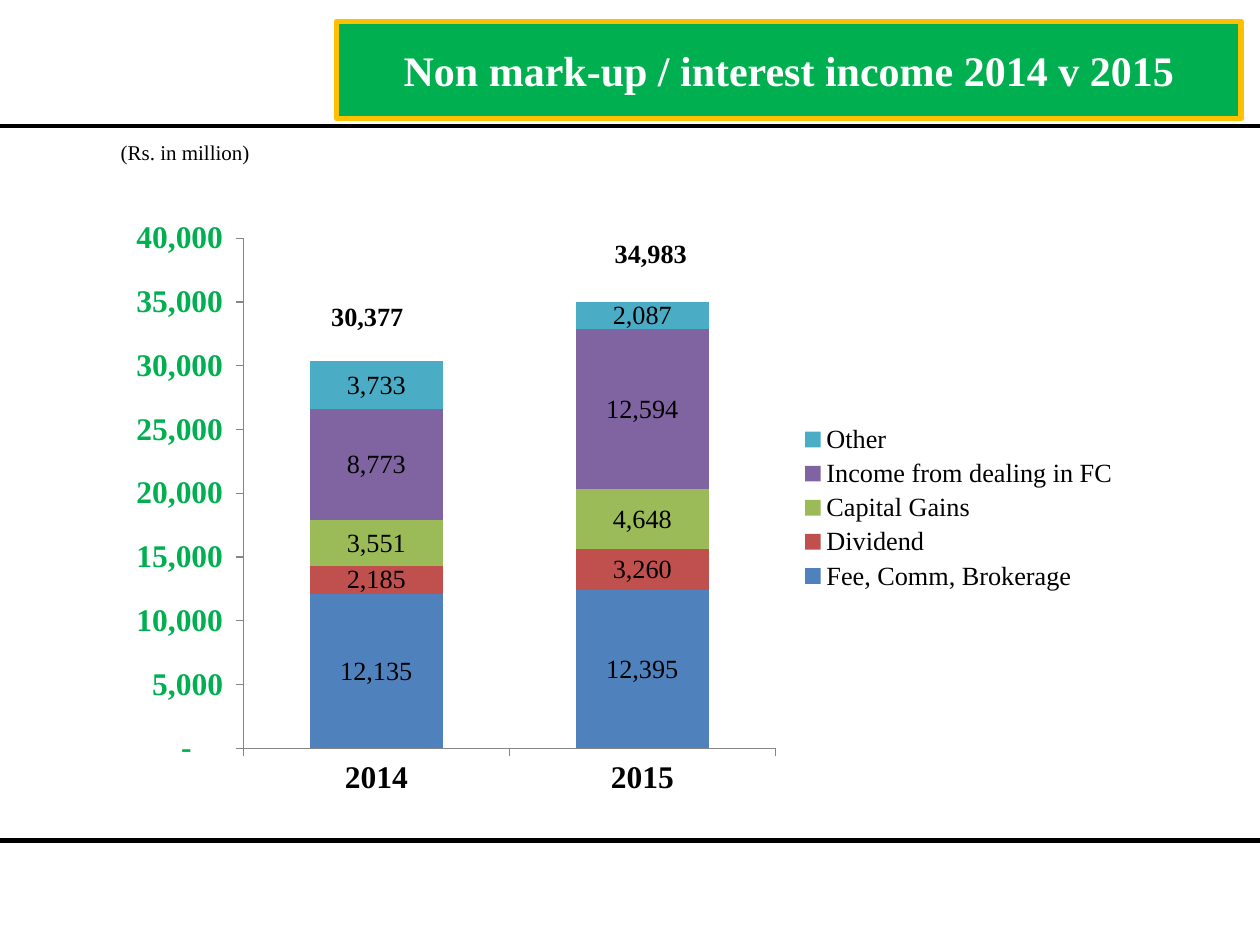
"""Build a slide with a stacked column chart of non mark-up income, 2014 v 2015."""
from lxml import etree
from pptx import Presentation
from pptx.chart.data import CategoryChartData
from pptx.dml.color import RGBColor
from pptx.enum.chart import XL_CHART_TYPE, XL_LEGEND_POSITION, XL_TICK_MARK
from pptx.enum.shapes import MSO_CONNECTOR
from pptx.enum.text import MSO_ANCHOR, MSO_AUTO_SIZE, PP_ALIGN
from pptx.oxml import parse_xml
from pptx.oxml.ns import nsdecls, qn
from pptx.util import Inches, Pt

FONT = "Times New Roman"
BLACK = RGBColor(0x00, 0x00, 0x00)
WHITE = RGBColor(0xFF, 0xFF, 0xFF)
GREEN = RGBColor(0x00, 0xB0, 0x50)
GOLD = RGBColor(0xFF, 0xC0, 0x00)
GRAY = RGBColor(0x86, 0x86, 0x86)
BLUE = RGBColor(0x4F, 0x81, 0xBD)
RED = RGBColor(0xC0, 0x50, 0x4D)
OLIVE = RGBColor(0x9B, 0xBB, 0x59)
PURPLE = RGBColor(0x80, 0x64, 0xA2)
TEAL = RGBColor(0x4B, 0xAC, 0xC6)

TITLE = "Non mark-up / interest income 2014 v 2015"
YEARS = ["2014", "2015"]
INCOME = [
    ("Fee, Comm, Brokerage", (12135, 12395), BLUE),
    ("Dividend", (2185, 3260), RED),
    ("Capital Gains", (3551, 4648), OLIVE),
    ("Income from dealing in FC", (8773, 12594), PURPLE),
    ("Other", (3733, 2087), TEAL),
]
NOTES = [
    ("30,377", (2.33, 2.33, 1.17, 0.35), 15, True, PP_ALIGN.CENTER),
    ("34,983", (4.58, 1.83, 1.17, 0.35), 15, True, PP_ALIGN.CENTER),
    ("(Rs. in million)", (0.86, 1.06, 1.25, 0.3), 12, False, PP_ALIGN.LEFT),
]
RULE_TOPS = [1, 6.67]
CHART_BOX = (0.86, 1.66, 8.12, 4.74)
PLOT_BOX = (1.93, 1.89, 4.22, 4.05)
AXIS_FORMAT = '_(* #,##0_);_(* \\(#,##0\\);_(* "-"??_);_(@_)'


def style_font(font, size, color, bold=False):
    font.name = FONT
    font.size = Pt(size)
    font.bold = bold
    font.color.rgb = color


def write(shape, text, size, color, bold, alignment):
    shape.text_frame.word_wrap = True
    paragraph = shape.text_frame.paragraphs[0]
    paragraph.alignment = alignment
    run = paragraph.add_run()
    run.text = text
    style_font(run.font, size, color, bold)


def add_title(slide):
    title = slide.shapes.title
    title.left, title.top, title.width, title.height = map(
        Inches, (2.67, 0.17, 7.18, 0.77))
    title.fill.solid()
    title.fill.fore_color.rgb = GREEN
    title.line.color.rgb = GOLD
    title.line.width = Pt(3)
    title.text_frame.vertical_anchor = MSO_ANCHOR.MIDDLE
    write(title, TITLE, 24, WHITE, True, PP_ALIGN.CENTER)


def add_rule(slide, top):
    rule = slide.shapes.add_connector(
        MSO_CONNECTOR.STRAIGHT, 0, Inches(top), Inches(10), Inches(top))
    rule.line.color.rgb = BLACK
    rule.line.width = Pt(2.5)
    etree.SubElement(rule._element.spPr, qn("a:effectLst"))


def add_note(slide, text, box, size, bold, alignment):
    note = slide.shapes.add_textbox(*map(Inches, box))
    write(note, text, size, BLACK, bold, alignment)
    note.text_frame.auto_size = MSO_AUTO_SIZE.SHAPE_TO_FIT_TEXT


def set_plot_layout(chart):
    left, top, width, height = CHART_BOX
    plot_left, plot_top, plot_width, plot_height = PLOT_BOX
    fractions = {
        "x": (plot_left - left) / width,
        "y": (plot_top - top) / height,
        "w": plot_width / width,
        "h": plot_height / height,
    }
    settings = [("layoutTarget", "inner"), ("xMode", "edge"), ("yMode", "edge")]
    settings += [(key, f"{value:.3f}") for key, value in fractions.items()]
    items = "".join(f'<c:{key} val="{value}"/>' for key, value in settings)
    layout = parse_xml(
        f'<c:layout {nsdecls("c")}><c:manualLayout>{items}</c:manualLayout></c:layout>')
    plot_area = chart._chartSpace.chart.plotArea
    for previous in plot_area.findall(qn("c:layout")):
        plot_area.remove(previous)
    plot_area.insert(0, layout)


def style_axis(axis, color):
    axis.has_major_gridlines = False
    axis.major_tick_mark = XL_TICK_MARK.OUTSIDE
    axis.minor_tick_mark = XL_TICK_MARK.NONE
    axis.format.line.color.rgb = GRAY
    axis.format.line.width = Pt(0.75)
    style_font(axis.tick_labels.font, 18, color, True)


def add_income_chart(slide):
    data = CategoryChartData(number_format="#,##0")
    data.categories = YEARS
    for name, values, _ in INCOME:
        data.add_series(name, values)
    chart = slide.shapes.add_chart(
        XL_CHART_TYPE.COLUMN_STACKED, *map(Inches, CHART_BOX), data).chart
    chart.has_title = False
    chart.font.name = "Calibri"
    chart.font.size = Pt(18)
    chart.font.color.rgb = BLACK

    plot = chart.plots[0]
    plot.gap_width = 100
    plot.overlap = 100
    plot.vary_by_categories = False
    for series, (_, _, color) in zip(plot.series, INCOME):
        series.format.fill.solid()
        series.format.fill.fore_color.rgb = color
        series.data_labels.show_value = True
        style_font(series.data_labels.font, 15, BLACK)

    style_axis(chart.category_axis, BLACK)
    value_axis = chart.value_axis
    style_axis(value_axis, GREEN)
    value_axis.minimum_scale = 0
    value_axis.maximum_scale = 40000
    value_axis.major_unit = 5000
    value_axis.tick_labels.number_format = AXIS_FORMAT
    value_axis.tick_labels.number_format_is_linked = False

    chart.has_legend = True
    chart.legend.position = XL_LEGEND_POSITION.RIGHT
    chart.legend.include_in_layout = False
    style_font(chart.legend.font, 15, BLACK)
    set_plot_layout(chart)


def main():
    presentation = Presentation()
    presentation.slide_width = Inches(10)
    presentation.slide_height = Inches(7.5)
    slide = presentation.slides.add_slide(presentation.slide_layouts[5])
    for top in RULE_TOPS:
        add_rule(slide, top)
    add_title(slide)
    add_income_chart(slide)
    for note in NOTES:
        add_note(slide, *note)
    presentation.save("out.pptx")


if __name__ == "__main__":
    main()
